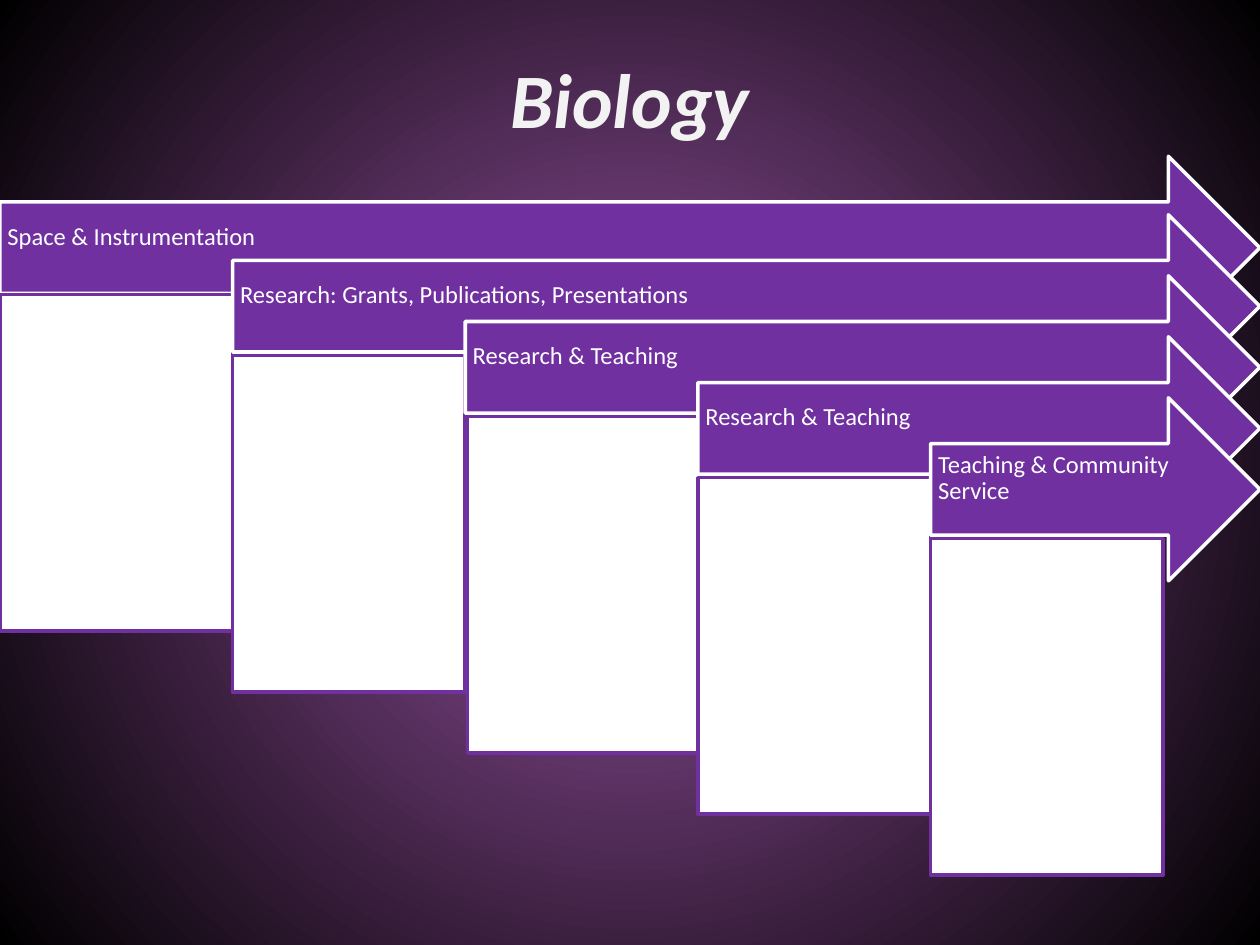
from lxml.etree import SubElement
from pptx import Presentation
from pptx.dml.color import RGBColor as RGB
from pptx.enum.shapes import MSO_SHAPE as Shape
from pptx.enum.text import MSO_ANCHOR as Anchor, PP_ALIGN as Align
from pptx.oxml.ns import qn
from pptx.util import Cm, Pt

TITLE = "Biology"
STAGES = [
    {"label": "Space & Instrumentation", "arrow_drop": 0.05},
    {"label": "Research: Grants, Publications, Presentations"},
    {"label": "Research & Teaching", "panel_shift": 0.05},
    {"label": "Research & Teaching"},
    {"label": "Teaching & Community Service"},
]
THEME = {
    "font": "Calibri",
    "title_size": 44,
    "label_size": 14,
    "title": "F2F2F2",
    "purple": "7030A0",
    "white": "FFFFFF",
    "glow": ["9651A1", "000000"],
    "line": 2,
}
WIDTH, HEIGHT = 25.4, 19.05
STEP_X, STEP_Y = 4.69, 1.23
ARROW_TOP, ARROW_HEIGHT = 3.1, 3.69
PANEL_TOP, PANEL_HEIGHT = 5.94, 6.78
LABEL_INSETS = (0.15, 0.15, 0.71, 0.58)


def paint_background(slide):
    """Fill the background with a glow spreading from the centre."""
    fill = slide.background.fill
    fill.gradient()
    for stop, color in zip(fill.gradient_stops, THEME["glow"]):
        stop.color.rgb = RGB.from_string(color)
    gradient = slide.element.find(".//" + qn("a:gradFill"))
    gradient.remove(gradient.find(qn("a:lin")))
    glow = SubElement(gradient, qn("a:path"), {"path": "circle"})
    SubElement(glow, qn("a:fillToRect"), dict.fromkeys("ltrb", "50000"))


def add_text(slide, text, box, size, color, align=Align.LEFT, bold=False,
             italic=False, insets=(0.25, 0.13, 0.25, 0.13), spacing=1.0):
    """Add a wrapped, vertically centred line of text."""
    frame = slide.shapes.add_textbox(*map(Cm, box)).text_frame
    frame.word_wrap = True
    frame.vertical_anchor = Anchor.MIDDLE
    (frame.margin_left, frame.margin_top,
     frame.margin_right, frame.margin_bottom) = map(Cm, insets)
    paragraph = frame.paragraphs[0]
    paragraph.alignment = align
    paragraph.line_spacing = spacing
    run = paragraph.add_run()
    run.text = text
    run.font.name = THEME["font"]
    run.font.size = Pt(size)
    run.font.bold = bold
    run.font.italic = italic
    run.font.color.rgb = RGB.from_string(color)


def add_block(slide, kind, box, fill, line):
    """Add a filled and outlined preset shape."""
    block = slide.shapes.add_shape(kind, *map(Cm, box))
    block.shadow.inherit = False
    block.fill.solid()
    block.fill.fore_color.rgb = RGB.from_string(fill)
    block.line.color.rgb = RGB.from_string(line)
    block.line.width = Pt(THEME["line"])


def add_stage(slide, index, label, arrow_drop=0, panel_shift=0):
    """Add one arrow with its label and the panel hanging below it."""
    left, drop = index * STEP_X, index * STEP_Y
    length = WIDTH - left
    arrow_top = ARROW_TOP + drop + arrow_drop
    quarter = ARROW_HEIGHT / 4
    add_block(slide, Shape.RIGHT_ARROW, (left, arrow_top, length, ARROW_HEIGHT),
              THEME["purple"], THEME["white"])
    add_text(slide, label,
             (left, arrow_top + quarter, length - quarter, 2 * quarter),
             THEME["label_size"], THEME["white"], insets=LABEL_INSETS, spacing=0.9)
    add_block(slide, Shape.RECTANGLE,
              (left + panel_shift, PANEL_TOP + drop, STEP_X, PANEL_HEIGHT),
              THEME["white"], THEME["purple"])


def main():
    """Build and save the slide."""
    deck = Presentation()
    deck.slide_width, deck.slide_height = Cm(WIDTH), Cm(HEIGHT)
    slide = deck.slides.add_slide(deck.slide_layouts[6])
    paint_background(slide)
    add_text(slide, TITLE, (0, 0, WIDTH, 3.94), THEME["title_size"],
             THEME["title"], align=Align.CENTER, bold=True, italic=True)
    for index, stage in enumerate(STAGES):
        add_stage(slide, index, **stage)
    deck.save("out.pptx")


if __name__ == "__main__":
    main()
